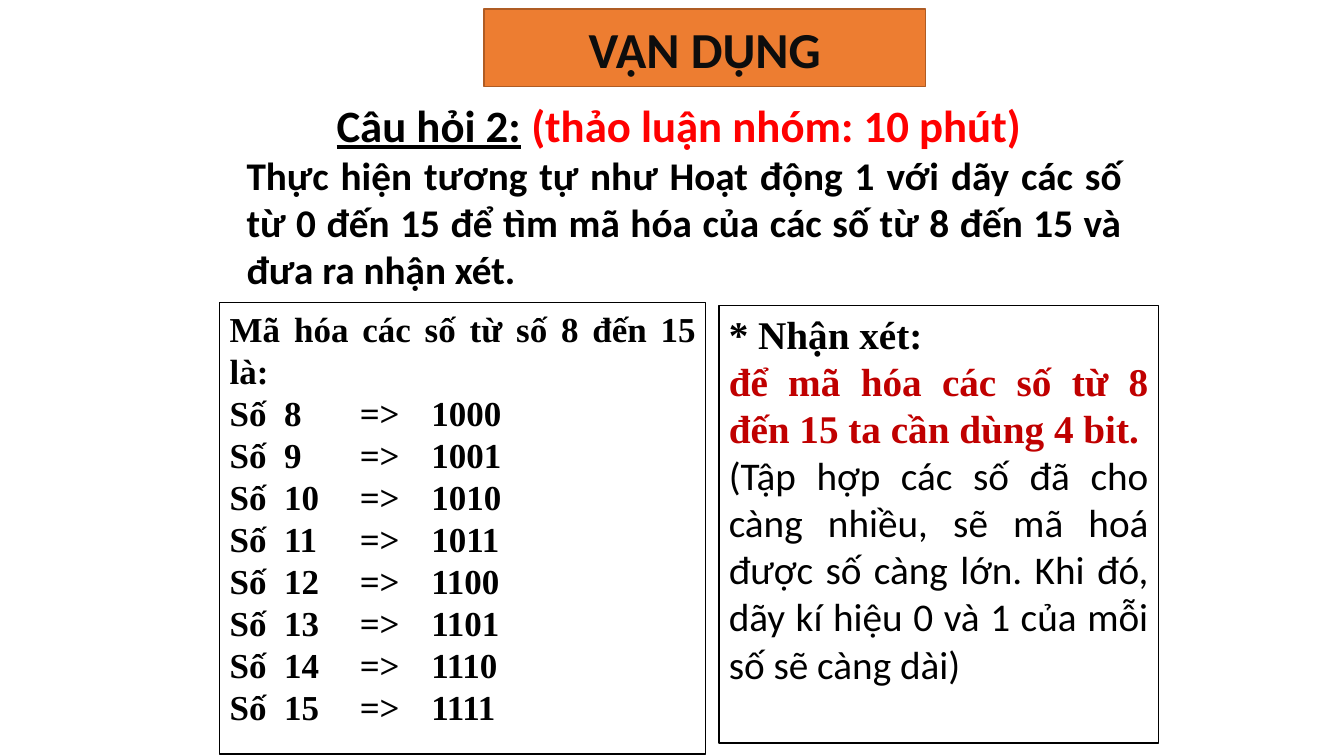
from lxml import etree
from pptx import Presentation
from pptx.dml.color import RGBColor
from pptx.enum.shapes import MSO_SHAPE
from pptx.enum.text import MSO_ANCHOR, PP_ALIGN
from pptx.oxml.ns import qn
from pptx.util import Inches, Pt

RECTANGLE = MSO_SHAPE.RECTANGLE
SNIPPED = MSO_SHAPE.SNIP_2_DIAG_RECTANGLE
TOP, MIDDLE = MSO_ANCHOR.TOP, MSO_ANCHOR.MIDDLE
CENTER, JUSTIFY = PP_ALIGN.CENTER, PP_ALIGN.JUSTIFY

BLACK = RGBColor(0x00, 0x00, 0x00)
WHITE = RGBColor(0xFF, 0xFF, 0xFF)
RED = RGBColor(0xFF, 0x00, 0x00)
DARK_RED = RGBColor(0xC0, 0x00, 0x00)
ORANGE = RGBColor(0xED, 0x7D, 0x31)
BROWN = RGBColor(0xAF, 0x5C, 0x24)
NEAR_BLACK = RGBColor(0x0D, 0x0D, 0x0D)

SANS, SERIF = "Calibri", "Times New Roman"
CODE_TABS = (0.54, 1.29, 2.0)


def add_panel(slide, left, top, width, height, fill=WHITE, border=BLACK,
              outline=RECTANGLE, anchor=TOP):
    """Add a filled panel and return its text frame."""
    panel = slide.shapes.add_shape(
        outline, Inches(left), Inches(top), Inches(width), Inches(height))
    panel.shadow.inherit = False
    panel.fill.solid()
    panel.fill.fore_color.rgb = fill
    if border is None:
        panel.line.fill.background()
    else:
        panel.line.color.rgb = border
        panel.line.width = Pt(1)
    frame = panel.text_frame
    frame.word_wrap = True
    frame.vertical_anchor = anchor
    return frame


def next_paragraph(frame, alignment):
    """Return the first paragraph while it is empty, else a new one."""
    first = frame.paragraphs[0]
    paragraph = frame.add_paragraph() if first.runs else first
    paragraph.alignment = alignment
    return paragraph


def add_run(paragraph, text, size, font=SANS, color=BLACK, bold=True,
            underline=False):
    run = paragraph.add_run()
    run.text = text
    run.font.name = font
    run.font.size = Pt(size)
    run.font.color.rgb = color
    run.font.bold = bold
    run.font.underline = underline


def set_tabs(paragraph, positions):
    tab_list = etree.SubElement(
        paragraph._p.get_or_add_pPr(), qn("a:tabLst"))
    for position in positions:
        etree.SubElement(
            tab_list, qn("a:tab"), pos=str(Inches(position)), algn="l")


def add_question(slide):
    question = add_panel(slide, 2.18, 0.93, 9.21, 2.01, border=None,
                         outline=SNIPPED, anchor=MIDDLE)
    heading = next_paragraph(question, CENTER)
    add_run(heading, "Câu hỏi 2:", 32, underline=True)
    add_run(heading, " ", 32, bold=False)
    add_run(heading, "(thảo luận nhóm: 10 phút) ", 32, color=RED)
    add_run(next_paragraph(question, JUSTIFY),
            "Thực hiện tương tự như Hoạt động 1 với dãy các số từ 0 đến 15 "
            "để tìm mã hóa của các số từ 8 đến 15 và đưa ra nhận xét.", 28)


def add_codes(slide):
    codes = add_panel(slide, 2.18, 3, 4.82, 4.48)
    add_run(next_paragraph(codes, JUSTIFY),
            "Mã hóa các số từ số 8 đến 15 là:", 25, SERIF)
    for number in range(8, 16):
        code_line = next_paragraph(codes, JUSTIFY)
        set_tabs(code_line, CODE_TABS)
        add_run(code_line, f"Số\t{number}\t=>\t{number:b}", 25, SERIF)


def add_remark(slide):
    remark = add_panel(slide, 7.13, 3.03, 4.36, 4.34)
    add_run(next_paragraph(remark, JUSTIFY), "* Nhận xét:", 28, SERIF)
    add_run(next_paragraph(remark, JUSTIFY),
            "để mã hóa các số từ 8 đến 15 ta cần dùng 4 bit.",
            28, SERIF, DARK_RED)
    add_run(next_paragraph(remark, JUSTIFY),
            "(Tập hợp các số đã cho càng nhiều, sẽ mã hoá được số càng lớn. "
            "Khi đó, dãy kí hiệu 0 và 1 của mỗi số sẽ càng dài)",
            28, bold=False)


def add_title(slide):
    title = add_panel(slide, 4.8, 0.09, 4.38, 0.77, ORANGE, BROWN,
                      anchor=MIDDLE)
    add_run(next_paragraph(title, CENTER), "VẬN DỤNG", 36, color=NEAR_BLACK)


def main():
    presentation = Presentation()
    presentation.slide_width = Inches(13.33)
    presentation.slide_height = Inches(7.5)
    slide = presentation.slides.add_slide(presentation.slide_layouts[6])
    add_question(slide)
    add_codes(slide)
    add_remark(slide)
    add_title(slide)
    presentation.save("out.pptx")


if __name__ == "__main__":
    main()
